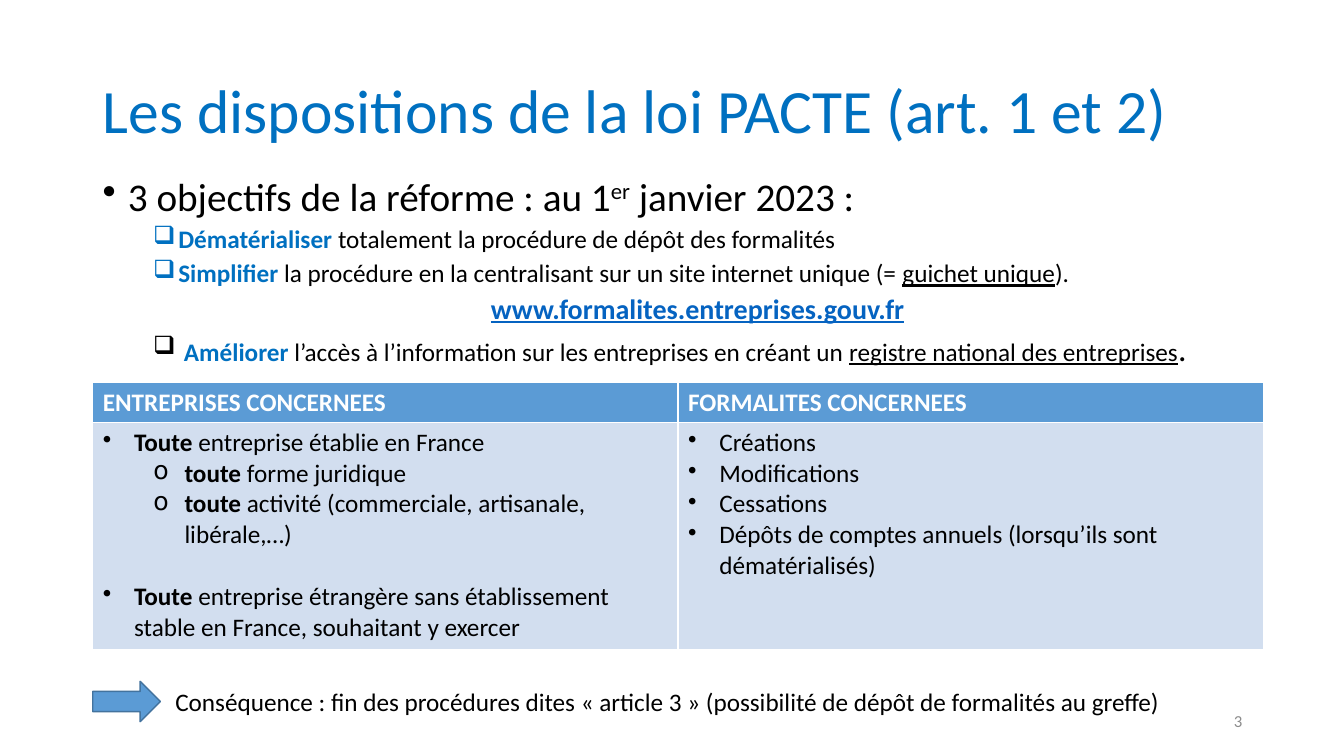
from lxml import etree
from pptx import Presentation
from pptx.dml.color import RGBColor
from pptx.enum import shapes, text
from pptx.oxml import ns
from pptx.util import Inches, Pt

FONT = "Calibri"
BLACK = RGBColor(0x00, 0x00, 0x00)
WHITE = RGBColor(0xFF, 0xFF, 0xFF)
GREY = RGBColor(0x8C, 0x8C, 0x8C)
BLUE = RGBColor(0x00, 0x70, 0xC0)
LINK_BLUE = RGBColor(0x05, 0x63, 0xC1)
HEADER_BLUE = RGBColor(0x5B, 0x9B, 0xD5)
CELL_BLUE = RGBColor(0xD2, 0xDE, 0xEF)
OUTLINE_BLUE = RGBColor(0x43, 0x73, 0x9E)

BOLD = {"bold": True}
KEYWORD = {"bold": True, "color": BLUE}
UNDERLINED = {"underline": True}

OBJECTIVES = [
    [("Dématérialiser ", KEYWORD), ("totalement la procédure de dépôt des formalités", {})],
    [("Simplifier ", KEYWORD),
     ("la procédure en la centralisant sur un site internet unique (= ", {}),
     ("guichet unique", UNDERLINED), (").", {})],
    [(" ", {}), ("Améliorer ", KEYWORD),
     ("l’accès à l’information sur les entreprises en créant un ", {}),
     ("registre national des entreprises", UNDERLINED), (".", {"size": 24})],
]
HEADERS = ["ENTREPRISES CONCERNEES", "FORMALITES CONCERNEES"]
COMPANIES = [
    (0, "Toute", " entreprise établie en France", 0),
    (1, "toute", " forme juridique", 0),
    (1, "toute", " activité (commerciale, artisanale, libérale,…)", 0),
    (0, "Toute", " entreprise étrangère sans établissement stable en France, souhaitant y exercer", 22),
]
FORMALITIES = [
    "Créations",
    "Modifications",
    "Cessations",
    "Dépôts de comptes annuels (lorsqu’ils sont dématérialisés)",
]


def set_bullet(paragraph, character, left, hanging):
    """Give a paragraph a bullet character and a hanging indent in inches."""
    properties = paragraph._p.get_or_add_pPr()
    properties.set("marL", str(Inches(left)))
    properties.set("indent", str(-Inches(hanging)))
    etree.SubElement(properties, ns.qn("a:buChar")).set("char", character)


def format_paragraph(paragraph, size, color=BLACK, bold=False):
    """Set the font that the runs of a paragraph share."""
    font = paragraph.font
    font.name, font.size, font.bold = FONT, Pt(size), bold
    font.color.rgb = color


def add_runs(paragraph, runs):
    """Add runs of text, each with what sets it apart from its paragraph."""
    for content, style in runs:
        run = paragraph.add_run()
        run.text = content
        if "bold" in style:
            run.font.bold = style["bold"]
        if "underline" in style:
            run.font.underline = style["underline"]
        if "color" in style:
            run.font.color.rgb = style["color"]
        if "size" in style:
            run.font.size = Pt(style["size"])
        if "baseline" in style:
            run.font._element.set("baseline", style["baseline"])


def next_paragraph(frame):
    """Return the first paragraph while it is empty, else a new one."""
    first = frame.paragraphs[0]
    return frame.add_paragraph() if first.runs else first


def add_textbox(slide, box, wrap=True):
    """Add an empty text box and return its text frame."""
    frame = slide.shapes.add_textbox(*map(Inches, box)).text_frame
    frame.word_wrap = wrap
    return frame


def add_title(slide, box):
    """Place and format the title placeholder."""
    title = slide.shapes.title
    title.left, title.top, title.width, title.height = map(Inches, box)
    title.text_frame.text = "Les dispositions de la loi PACTE (art. 1 et 2)"
    title.text_frame.vertical_anchor = text.MSO_ANCHOR.MIDDLE
    paragraph = title.text_frame.paragraphs[0]
    paragraph.alignment = text.PP_ALIGN.LEFT
    paragraph.line_spacing = 0.9
    format_paragraph(paragraph, 44, BLUE)


def add_objectives(slide, box):
    """Add the heading, the three objectives and the site address."""
    frame = add_textbox(slide, box)
    heading = next_paragraph(frame)
    set_bullet(heading, "•", 0.25, 0.25)
    heading.space_before = Pt(10)
    format_paragraph(heading, 28)
    add_runs(heading, [("3 objectifs de la réforme : au 1", {}),
                       ("er", {"baseline": "30000"}), (" janvier 2023 :", {})])

    def add_objective(runs):
        """Add one objective with its box bullet."""
        paragraph = frame.add_paragraph()
        paragraph.level = 1
        set_bullet(paragraph, "❑", 0.75, 0.25)
        paragraph.space_before = Pt(5)
        format_paragraph(paragraph, 18)
        add_runs(paragraph, runs)

    for runs in OBJECTIVES[:2]:
        add_objective(runs)
    address = frame.add_paragraph()
    address.level = 1
    address._p.get_or_add_pPr().set("marL", str(Inches(0.5)))
    address.alignment = text.PP_ALIGN.CENTER
    address.space_before = Pt(5)
    format_paragraph(address, 20, LINK_BLUE, bold=True)
    add_runs(address, [("www.formalites.entreprises.gouv.fr", UNDERLINED)])
    add_objective(OBJECTIVES[2])
    for paragraph in frame.paragraphs:
        paragraph.line_spacing = 0.9


def add_cell_item(cell, runs, level=0, space_before=0):
    """Add one bulleted line to a table cell."""
    paragraph = next_paragraph(cell.text_frame)
    paragraph.level = level
    set_bullet(paragraph, "•o"[level], 0.31 + 0.5 * level, 0.31)
    paragraph.space_before = Pt(space_before)
    format_paragraph(paragraph, 18)
    add_runs(paragraph, runs)


def add_scope_table(slide, box):
    """Add the table of companies and formalities concerned."""
    table = slide.shapes.add_table(2, 2, *map(Inches, box)).table
    header_height = 0.4
    table.rows[0].height = Inches(header_height)
    table.rows[1].height = Inches(box[3] - header_height)
    for column, header in enumerate(HEADERS):
        cell = table.cell(0, column)
        cell.text = header
        format_paragraph(cell.text_frame.paragraphs[0], 18, WHITE, bold=True)
        for row, color in enumerate([HEADER_BLUE, CELL_BLUE]):
            fill = table.cell(row, column).fill
            fill.solid()
            fill.fore_color.rgb = color
    for level, subject, detail, gap in COMPANIES:
        add_cell_item(table.cell(1, 0), [(subject, BOLD), (detail, {})], level, gap)
    for formality in FORMALITIES:
        add_cell_item(table.cell(1, 1), [(formality, {})])


def add_consequence(slide, box):
    """Add the arrow and the consequence to its right."""
    left, top, width, height = box
    arrow_width, text_offset = 0.67, 0.72
    arrow = slide.shapes.add_shape(
        shapes.MSO_SHAPE.RIGHT_ARROW, *map(Inches, (left, top, arrow_width, height)))
    arrow.shadow.inherit = False
    arrow.fill.solid()
    arrow.fill.fore_color.rgb = HEADER_BLUE
    arrow.line.color.rgb = OUTLINE_BLUE
    arrow.line.width = Pt(1)
    frame = add_textbox(slide, (left + text_offset, top, width - text_offset, height), wrap=False)
    paragraph = frame.paragraphs[0]
    format_paragraph(paragraph, 18)
    add_runs(paragraph, [("Conséquence : fin des procédures dites « article 3 » "
                          "(possibilité de dépôt de formalités au greffe)", {})])


def add_slide_number(slide, box):
    """Add the slide number at the bottom right."""
    frame = add_textbox(slide, box)
    frame.vertical_anchor = text.MSO_ANCHOR.MIDDLE
    paragraph = frame.paragraphs[0]
    paragraph.alignment = text.PP_ALIGN.RIGHT
    format_paragraph(paragraph, 12, GREY)
    add_runs(paragraph, [("3", {})])


def main():
    """Build the slide and save the presentation."""
    presentation = Presentation()
    presentation.slide_width, presentation.slide_height = Inches(13.33), Inches(7.5)
    slide = presentation.slides.add_slide(presentation.slide_layouts.get_by_name("Title Only"))
    left = 0.92
    add_title(slide, (left, 0.4, 11.5, 1.45))
    add_objectives(slide, (left, 1.71, 11.5, 2.08))
    add_slide_number(slide, (9.42, 6.95, 3, 0.4))
    add_scope_table(slide, (left, 3.79, 11.61, 2.65))
    add_consequence(slide, (left, 6.76, 10.88, 0.4))
    presentation.save("out.pptx")


if __name__ == "__main__":
    main()
